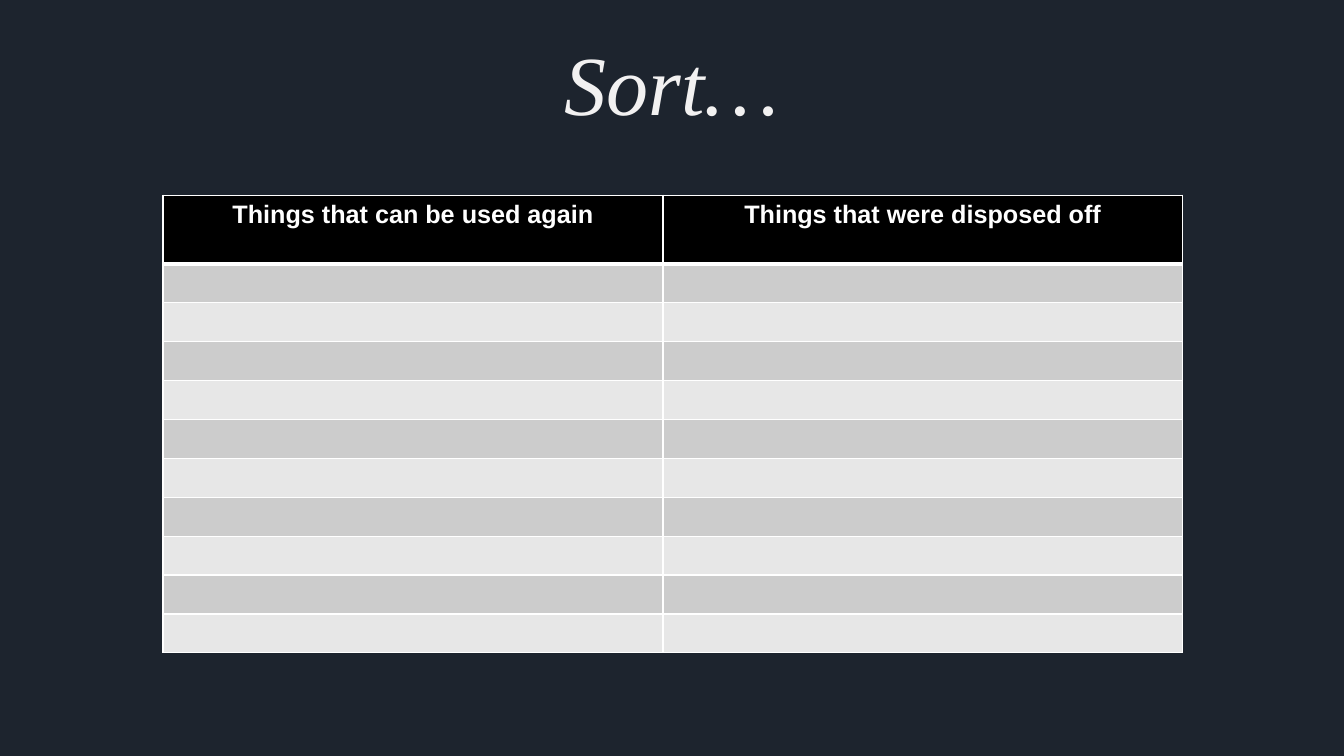
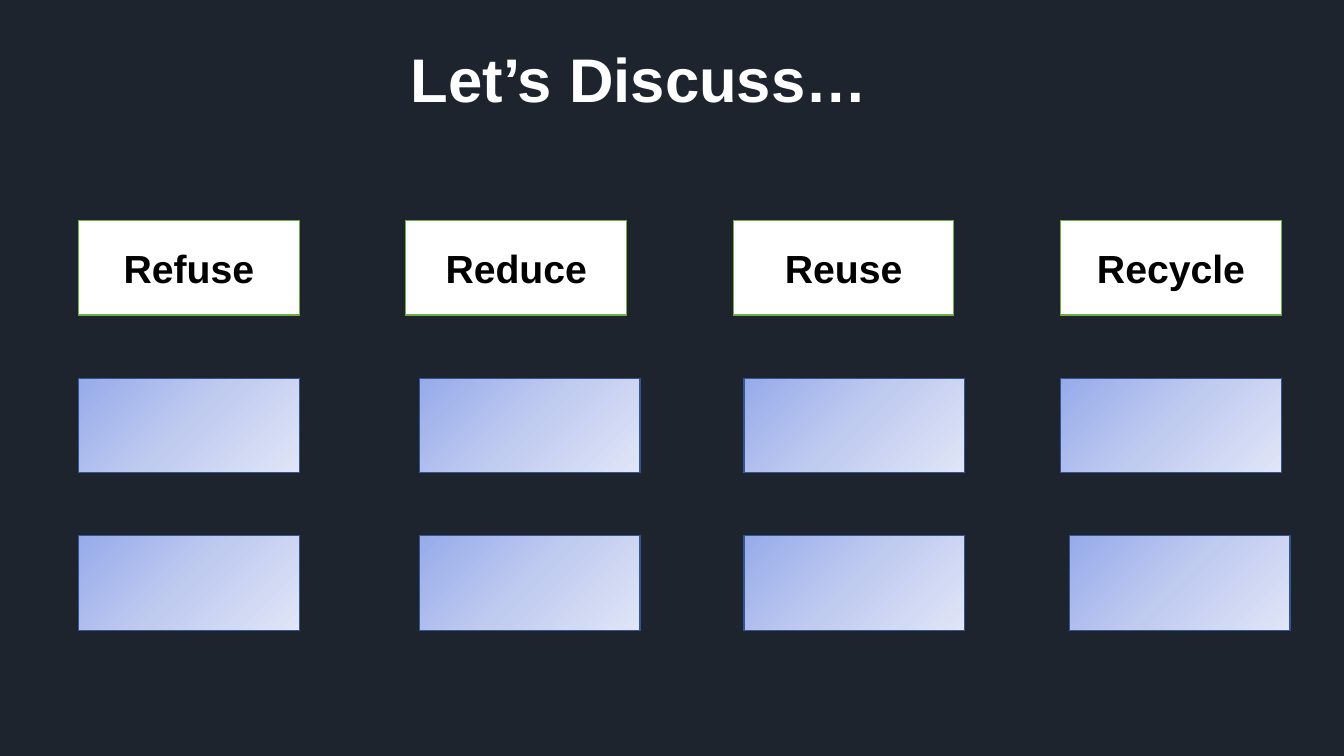
from copy import deepcopy

from lxml import etree
from pptx import Presentation
from pptx.dml.color import RGBColor
from pptx.enum.shapes import MSO_SHAPE
from pptx.enum.text import MSO_ANCHOR, PP_ALIGN
from pptx.oxml.ns import qn
from pptx.util import Cm, Pt

RECTANGLE = MSO_SHAPE.RECTANGLE
CENTER = PP_ALIGN.CENTER
MIDDLE = MSO_ANCHOR.MIDDLE

NAVY = RGBColor(0x1D, 0x24, 0x2E)
WHITE = RGBColor(0xFF, 0xFF, 0xFF)
OFF_WHITE = RGBColor(0xF2, 0xF1, 0xF1)
BLACK = RGBColor(0x00, 0x00, 0x00)
DARK_BAND = RGBColor(0xCC, 0xCC, 0xCC)
LIGHT_BAND = RGBColor(0xE7, 0xE7, 0xE7)
GREEN = RGBColor(0x70, 0xAD, 0x47)
BLUE_LINE = RGBColor(0x32, 0x54, 0x91)
BLUE_FADE = (
    RGBColor(0x96, 0xAB, 0xEA),
    RGBColor(0xC0, 0xCB, 0xF0),
    RGBColor(0xE0, 0xE5, 0xF7),
)

SANS = "Arial"
SERIF = "Times New Roman"


class Deck:
    box_width, box_height = Cm(5.56), Cm(2.38)
    box_line = Pt(0.85)
    thin, thick = Pt(1), Pt(3)

    def __init__(self):
        self.prs = Presentation()
        self.prs.slide_width = Cm(33.87)
        self.prs.slide_height = Cm(19.05)
        self.slide = None

    def new_slide(self):
        self.slide = self.prs.slides.add_slide(self.prs.slide_layouts[6])
        background = self.slide.background.fill
        background.solid()
        background.fore_color.rgb = NAVY

    def set_text(self, frame, text, size, color, font=SANS, bold=True, italic=False):
        frame.text = text
        paragraph = frame.paragraphs[0]
        paragraph.alignment = CENTER
        style = paragraph.runs[0].font
        style.name, style.size = font, Pt(size)
        style.bold, style.italic = bold, italic
        style.color.rgb = color
        return paragraph

    def title(self, text, left, top, width, height, size, color, **style):
        frame = self.slide.shapes.add_textbox(left, top, width, height).text_frame
        frame.word_wrap = True
        return frame, self.set_text(frame, text, size, color, **style)

    def box(self, left, top, line):
        box = self.slide.shapes.add_shape(
            RECTANGLE, left, top, self.box_width, self.box_height)
        box.shadow.inherit = False
        box.line.color.rgb = line
        box.line.width = self.box_line
        return box

    def heading_box(self, text, left, top):
        box = self.box(left, top, GREEN)
        box.fill.solid()
        box.fill.fore_color.rgb = WHITE
        box.text_frame.vertical_anchor = MIDDLE
        self.set_text(box.text_frame, text, 28, BLACK)

    def answer_box(self, left, top):
        box = self.box(left, top, BLUE_LINE)
        box.fill.gradient()
        box.fill.gradient_angle = 315
        stop_list = box.element.spPr.find(qn("a:gradFill")).find(qn("a:gsLst"))
        stop_list.append(deepcopy(stop_list[0]))
        for index, color in enumerate(BLUE_FADE):
            stop = box.fill.gradient_stops[index]
            stop.position = index / 2
            stop.color.rgb = color

    def cell_border(self, cell, side, width):
        properties = cell._tc.get_or_add_tcPr()
        line = etree.SubElement(properties, qn(f"a:ln{side}"), w=str(width))
        solid = etree.SubElement(line, qn("a:solidFill"))
        etree.SubElement(solid, qn("a:srgbClr"), val=str(WHITE))

    def paint_cell(self, cell, color, top, bottom):
        borders = {"L": self.thin, "R": self.thin, "T": top, "B": bottom}
        for side, width in borders.items():
            self.cell_border(cell, side, width)
        cell.fill.solid()
        cell.fill.fore_color.rgb = color

    def sorting_table(self, headings, left, top, widths, header_height,
                      row_height, blank_rows):
        height = header_height + blank_rows * row_height
        table = self.slide.shapes.add_table(
            blank_rows + 1, len(headings), left, top, sum(widths), height).table
        table.horz_banding = False
        for column, width in zip(table.columns, widths):
            column.width = width
        for index, row in enumerate(table.rows):
            row.height = row_height if index else header_height
            band = DARK_BAND if index % 2 else LIGHT_BAND
            for cell, heading in zip(row.cells, headings):
                if index:
                    cell.margin_top = cell.margin_bottom = 0
                    above = self.thick if index == 1 else self.thin
                    self.paint_cell(cell, band, above, self.thin)
                else:
                    self.set_text(cell.text_frame, heading, 18, WHITE)
                    self.paint_cell(cell, BLACK, self.thin, self.thick)


def sort_slide(deck):
    deck.new_slide()
    frame, paragraph = deck.title(
        "Sort…", Cm(1.24), Cm(1.09), Cm(31.4), Cm(3.18), 60, OFF_WHITE,
        font=SERIF, bold=False, italic=True)
    frame.margin_left = frame.margin_right = 0
    frame.margin_top = frame.margin_bottom = 0
    paragraph.line_spacing = 0.9
    deck.sorting_table(
        ("Things that can be used again", "Things that were disposed off"),
        Cm(4.11), Cm(4.92), (Cm(12.6), Cm(13.09)), Cm(1.73), Cm(0.98), 10)


def discuss_slide(deck):
    deck.new_slide()
    left, top, column_step, row_step = Cm(1.98), Cm(5.56), Cm(8.25), Cm(3.97)
    for column, heading in enumerate(("Refuse", "Reduce", "Reuse", "Recycle")):
        deck.heading_box(heading, left + column * column_step, top)
    deck.title("Let’s Discuss…", Cm(8.2), Cm(0.91), Cm(15.82), Cm(2.13), 44, WHITE)
    shared_lefts = (left, Cm(10.57), Cm(18.75))
    for row, last_left in enumerate((Cm(26.73), Cm(26.95)), start=1):
        for answer_left in (*shared_lefts, last_left):
            deck.answer_box(answer_left, top + row * row_step)


def main():
    deck = Deck()
    sort_slide(deck)
    discuss_slide(deck)
    deck.prs.save("out.pptx")


if __name__ == "__main__":
    main()
